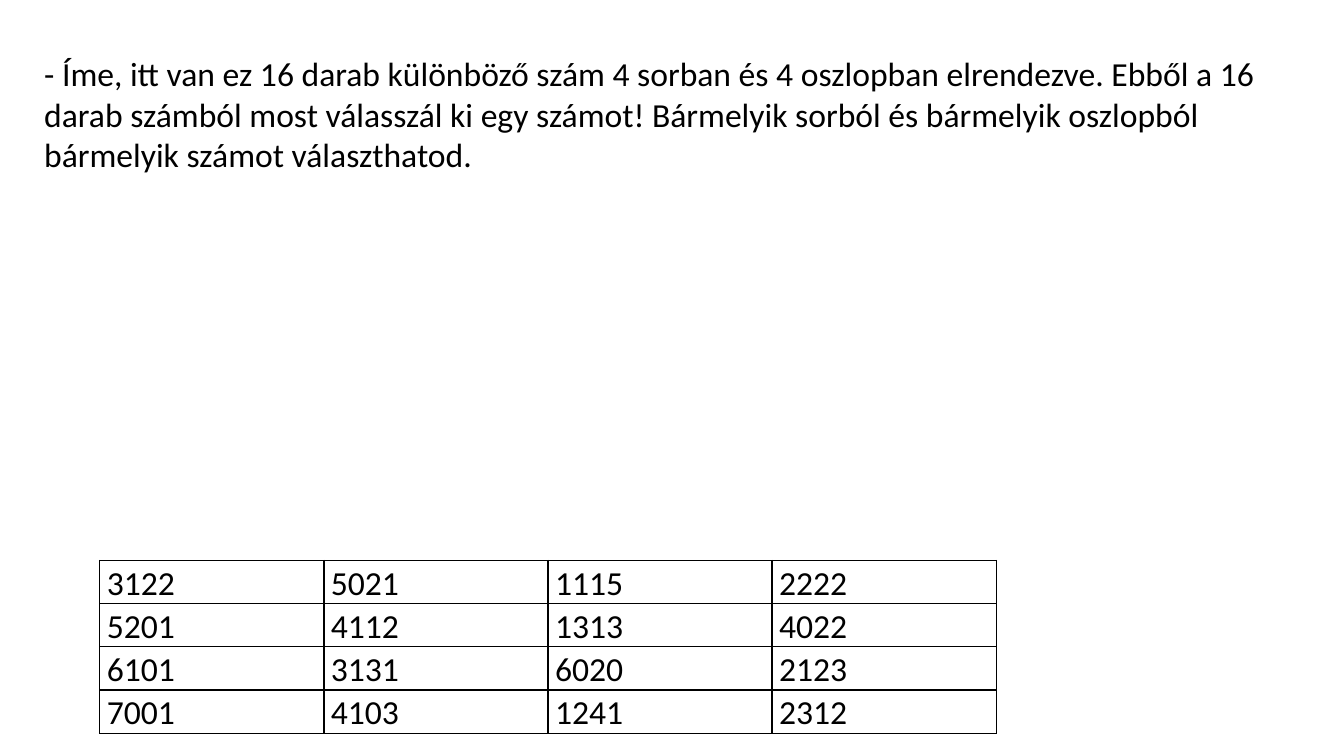
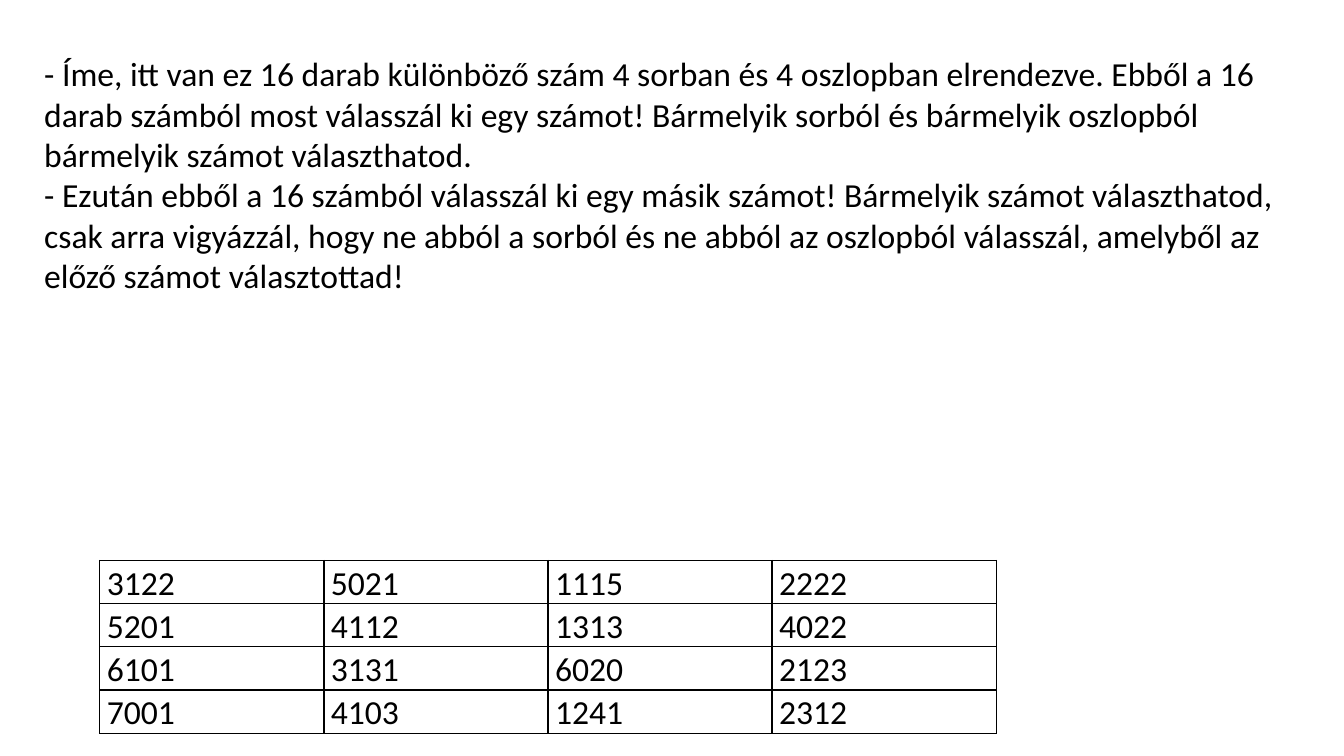
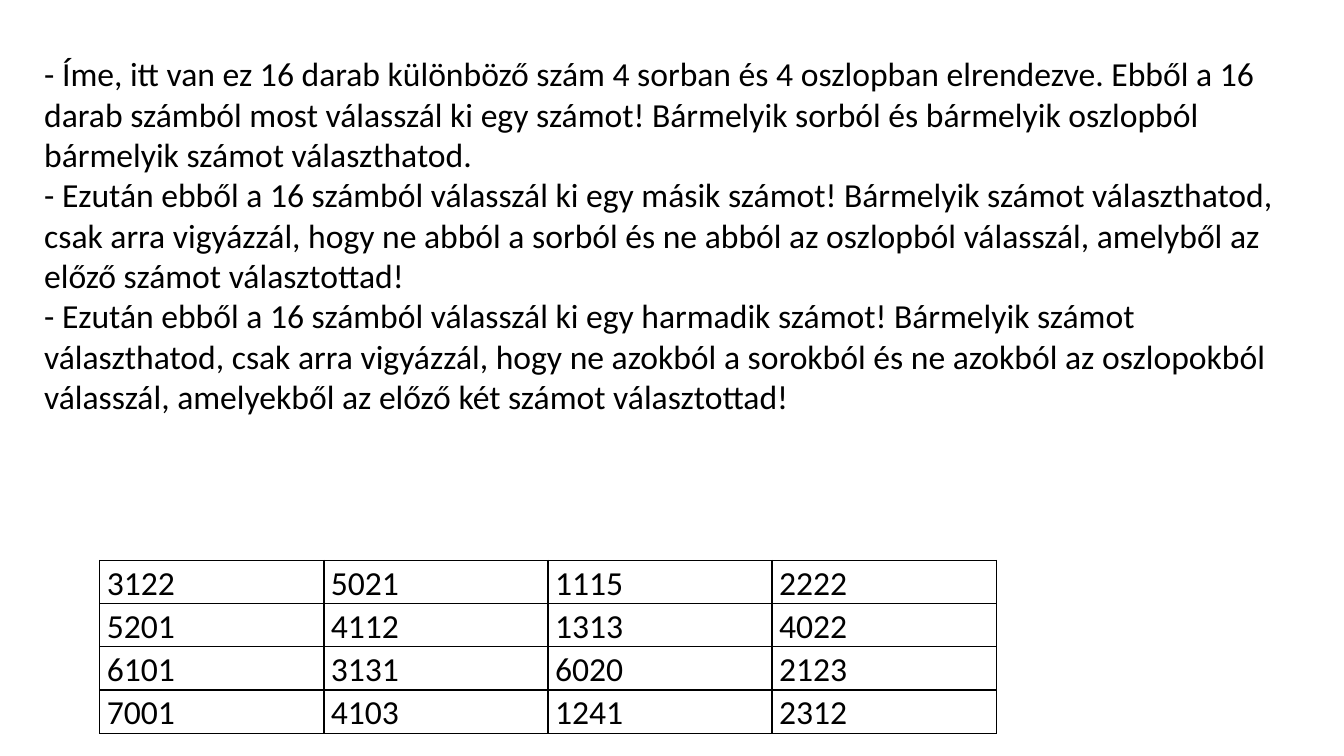
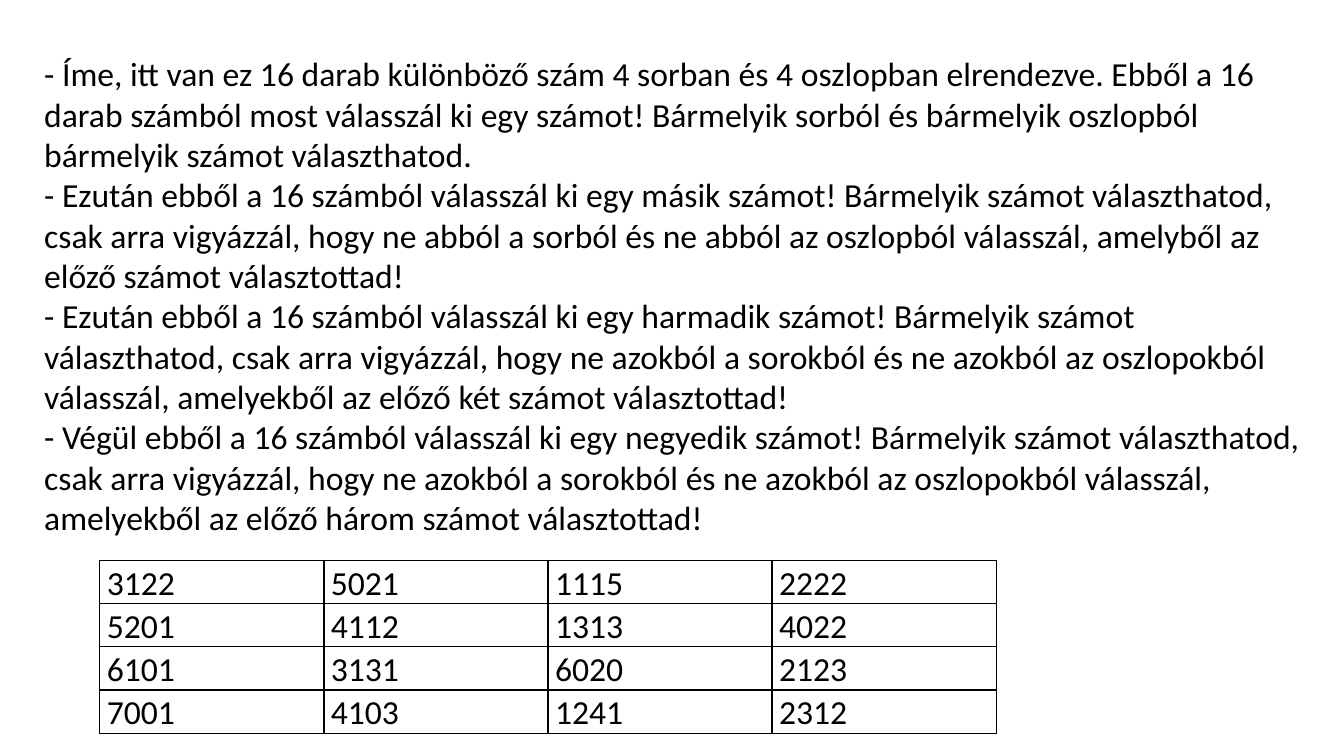
from dataclasses import dataclass

from lxml import etree
from pptx import Presentation
from pptx.dml.color import RGBColor
from pptx.enum.text import MSO_AUTO_SIZE
from pptx.oxml.ns import qn
from pptx.util import Inches, Pt

GROW = MSO_AUTO_SIZE.SHAPE_TO_FIT_TEXT
BLANK = 6


@dataclass(frozen=True)
class Theme:
    font: str = "Calibri"
    size: int = 24
    ink: str = "000000"
    rule: float = 1
    lead: float = 1.07


THEME = Theme()

STEPS = [
    "- Íme, itt van ez 16 darab különböző szám 4 sorban és 4 oszlopban elrendezve. "
    "Ebből a 16 darab számból most válasszál ki egy számot! "
    "Bármelyik sorból és bármelyik oszlopból bármelyik számot választhatod.",
    "- Ezután ebből a 16 számból válasszál ki egy másik számot! "
    "Bármelyik számot választhatod, csak arra vigyázzál, hogy ne abból a sorból "
    "és ne abból az oszlopból válasszál, amelyből az előző számot választottad!",
    "- Ezután ebből a 16 számból válasszál ki egy harmadik számot! "
    "Bármelyik számot választhatod, csak arra vigyázzál, hogy ne azokból a sorokból "
    "és ne azokból az oszlopokból válasszál, amelyekből az előző két számot választottad!",
    "- Végül ebből a 16 számból válasszál ki egy negyedik számot! "
    "Bármelyik számot választhatod, csak arra vigyázzál, hogy ne azokból a sorokból "
    "és ne azokból az oszlopokból válasszál, amelyekből az előző három számot választottad!",
]
STEP_H = 1.21

GRID = [
    [3122, 5021, 1115, 2222],
    [5201, 4112, 1313, 4022],
    [6101, 3131, 6020, 2123],
    [7001, 4103, 1241, 2312],
]


def style(frame):
    for para in frame.paragraphs:
        for run in para.runs:
            run.font.name = THEME.font
            run.font.size = Pt(THEME.size)
            run.font.color.rgb = RGBColor.from_string(THEME.ink)


def add_steps(slide, steps, left, top, width):
    height = 0.1 + STEP_H * len(steps)
    box = slide.shapes.add_textbox(
        Inches(left), Inches(top), Inches(width), Inches(height))
    frame = box.text_frame
    frame.word_wrap = True
    frame.auto_size = GROW
    frame.text = "\n".join(steps)
    style(frame)


def add_edges(cell):
    """Rule all four sides; the lines must come before the cell's fill."""
    props = cell._tc.get_or_add_tcPr()
    for place, side in enumerate(("lnL", "lnR", "lnT", "lnB")):
        line = etree.Element(qn(f"a:{side}"), w=str(Pt(THEME.rule)))
        fill = etree.SubElement(line, qn("a:solidFill"))
        etree.SubElement(fill, qn("a:srgbClr"), val=THEME.ink)
        props.insert(place, line)


def fill_cell(cell, value):
    cell.text = str(value)
    cell.margin_left = cell.margin_right = Inches(0.07)
    cell.margin_top = cell.margin_bottom = 0
    cell.text_frame.paragraphs[0].line_spacing = THEME.lead
    style(cell.text_frame)
    cell.fill.background()
    add_edges(cell)


def add_grid(slide, grid, left, top, width, row_h):
    rows, cols = len(grid), len(grid[0])
    table = slide.shapes.add_table(
        rows, cols, Inches(left), Inches(top),
        Inches(width), Inches(row_h * rows)).table
    table.first_row = table.horz_banding = False
    for r, values in enumerate(grid):
        for c, value in enumerate(values):
            fill_cell(table.cell(r, c), value)


def main():
    deck = Presentation()
    deck.slide_width, deck.slide_height = Inches(13.33), Inches(7.5)
    for count in range(1, len(STEPS) + 1):
        slide = deck.slides.add_slide(deck.slide_layouts[BLANK])
        add_steps(slide, STEPS[:count], 0.34, 0.48, 12.77)
        add_grid(slide, GRID, 0.99, 5.56, 8.89, 0.41)
    deck.save("out.pptx")


if __name__ == "__main__":
    main()
